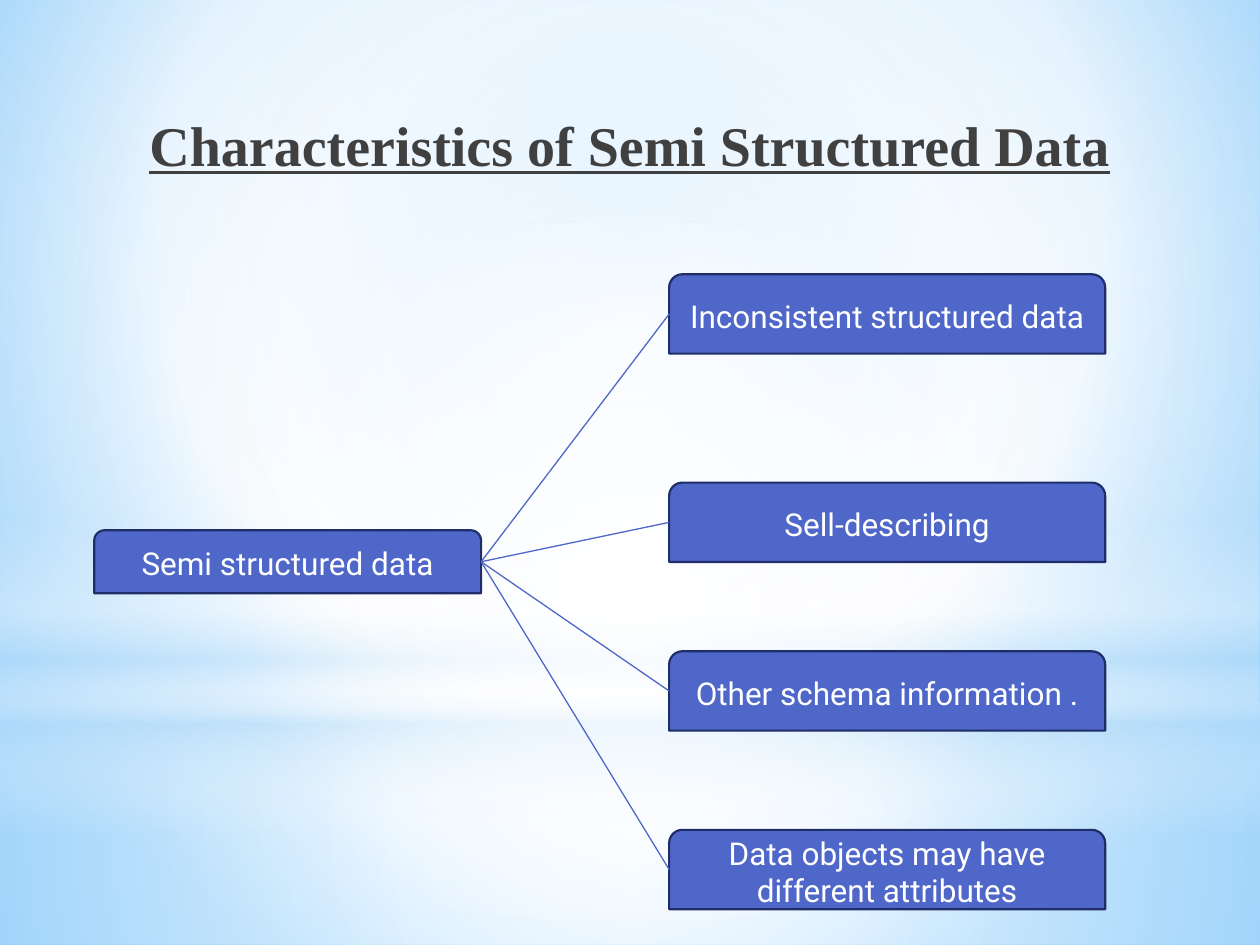
from dataclasses import dataclass

from lxml.etree import SubElement
from pptx import Presentation
from pptx.dml.color import RGBColor
from pptx.enum.shapes import MSO_CONNECTOR, MSO_SHAPE
from pptx.enum.text import MSO_ANCHOR, PP_ALIGN
from pptx.oxml.ns import qn
from pptx.util import Cm, Pt

WIDE, HIGH = 25.4, 19.05
BLUE, NAVY, WHITE, SKY = "4E67C8", "1F2E69", "FFFFFF", "B4DCFA"
MID = (50, 50, 50, 50)


@dataclass
class Stop:
    pos: int
    color: str
    alpha: int = 100


@dataclass
class Layer:
    kind: MSO_SHAPE
    top: float
    high: float
    stops: list[Stop]
    focus: tuple | None = MID


@dataclass
class Box:
    text: str
    left: float
    top: float
    wide: float
    high: float

    @property
    def mid(self) -> float:
        return self.top + self.high / 2


def rgb(code: str) -> RGBColor:
    return RGBColor.from_string(code)


def shade(fill, owner, stops: list[Stop], focus: tuple | None = None) -> None:
    """Give a fill a circular gradient around focus, or a vertical one without it."""
    fill.gradient()
    grad = owner.xpath(".//a:gradFill")[0]
    for child in list(grad):
        grad.remove(child)
    group = SubElement(grad, qn("a:gsLst"))
    for stop in stops:
        item = SubElement(group, qn("a:gs"), pos=str(stop.pos * 1000))
        color = SubElement(item, qn("a:srgbClr"), val=stop.color)
        if stop.alpha < 100:
            SubElement(color, qn("a:alpha"), val=str(stop.alpha * 1000))
    if focus:
        route = SubElement(grad, qn("a:path"))
        route.set("path", "circle")
        sides = {side: str(part * 1000) for side, part in zip("ltrb", focus)}
        SubElement(route, qn("a:fillToRect"), sides)
    else:
        SubElement(grad, qn("a:lin"), ang="5400000", scaled="0")


def draw_layer(slide, layer: Layer) -> None:
    shape = slide.shapes.add_shape(
        layer.kind, 0, Cm(layer.top), Cm(WIDE), Cm(layer.high))
    shape.shadow.inherit = False
    shape.line.fill.background()
    shade(shape.fill, shape.element, layer.stops, layer.focus)


def draw_title(slide, text: str) -> None:
    title = slide.shapes.title
    title.left, title.top = Cm(1.27), Cm(1.96)
    title.width, title.height = Cm(22.86), Cm(2.16)
    frame = title.text_frame
    frame.vertical_anchor = MSO_ANCHOR.TOP
    frame.margin_top = Cm(0.27)
    para = frame.paragraphs[0]
    para.alignment = PP_ALIGN.CENTER
    run = para.add_run()
    run.text = text
    font = run.font
    font.name, font.size = "Times New Roman", Pt(32)
    font.bold = font.underline = True
    shade(font.fill, title.element, [
        Stop(0, "000000"), Stop(40, "404040"), Stop(100, "212745", 65)])
    # Bring the title in front of the backdrop
    slide.shapes.element.append(title.element)


def draw_box(slide, box: Box) -> None:
    shape = slide.shapes.add_shape(
        MSO_SHAPE.ROUND_2_SAME_RECTANGLE,
        Cm(box.left), Cm(box.top), Cm(box.wide), Cm(box.high))
    shape.shadow.inherit = False
    shape.fill.solid()
    shape.fill.fore_color.rgb = rgb(BLUE)
    shape.line.color.rgb = rgb(NAVY)
    shape.line.width = Pt(1.25)
    frame = shape.text_frame
    frame.word_wrap = True
    frame.vertical_anchor = MSO_ANCHOR.MIDDLE
    para = frame.paragraphs[0]
    para.alignment = PP_ALIGN.CENTER
    run = para.add_run()
    run.text = box.text
    run.font.name, run.font.size = "Roboto", Pt(18)
    run.font.color.rgb = rgb(WHITE)


def draw_link(slide, start: Box, end: Box) -> None:
    line = slide.shapes.add_connector(
        MSO_CONNECTOR.STRAIGHT,
        Cm(start.left + start.wide), Cm(start.mid), Cm(end.left), Cm(end.mid))
    line.line.color.rgb = rgb(BLUE)
    line.line.width = Pt(0.75)
    SubElement(line.element.spPr, qn("a:effectLst"))


LAYERS = [
    Layer(MSO_SHAPE.RECTANGLE, 14.17, 4.88, [
        Stop(0, WHITE, 91), Stop(37, WHITE, 76), Stop(100, SKY, 79)]),
    Layer(MSO_SHAPE.RECTANGLE, 0, 14.17, [
        Stop(0, WHITE, 89), Stop(48, WHITE, 62), Stop(100, SKY, 79)]),
    Layer(MSO_SHAPE.RECTANGLE, 10.46, 6.35, [
        Stop(0, WHITE, 0), Stop(29, WHITE, 30), Stop(45, SKY, 40),
        Stop(55, WHITE, 26), Stop(65, SKY, 60), Stop(100, WHITE, 0)], None),
    Layer(MSO_SHAPE.OVAL, 4.45, 14.17, [Stop(0, WHITE), Stop(56, WHITE, 0)]),
]
ROOT = Box("Semi structured data", 1.9, 10.69, 7.8, 1.27)
TRAITS = [
    Box(text, 13.49, top, 8.79, 1.6) for text, top in [
        ("Inconsistent structured data", 5.53),
        ("Sell-describing", 9.73),
        ("Other schema information .", 13.13),
        ("Data objects may have different attributes", 16.73),
    ]
]


def main() -> None:
    deck = Presentation()
    deck.slide_width, deck.slide_height = Cm(WIDE), Cm(HIGH)
    slide = deck.slides.add_slide(deck.slide_layouts.get_by_name("Title Only"))
    shade(slide.background.fill, slide.element, [
        Stop(0, "9ED5FF"), Stop(60, WHITE), Stop(100, "5BB9FF")],
        (20, 10, 20, 60))
    for layer in LAYERS:
        draw_layer(slide, layer)
    draw_title(slide, "Characteristics of Semi Structured Data")
    for box in [ROOT, *TRAITS]:
        draw_box(slide, box)
    for trait in TRAITS:
        draw_link(slide, ROOT, trait)
    deck.save("out.pptx")


if __name__ == "__main__":
    main()
